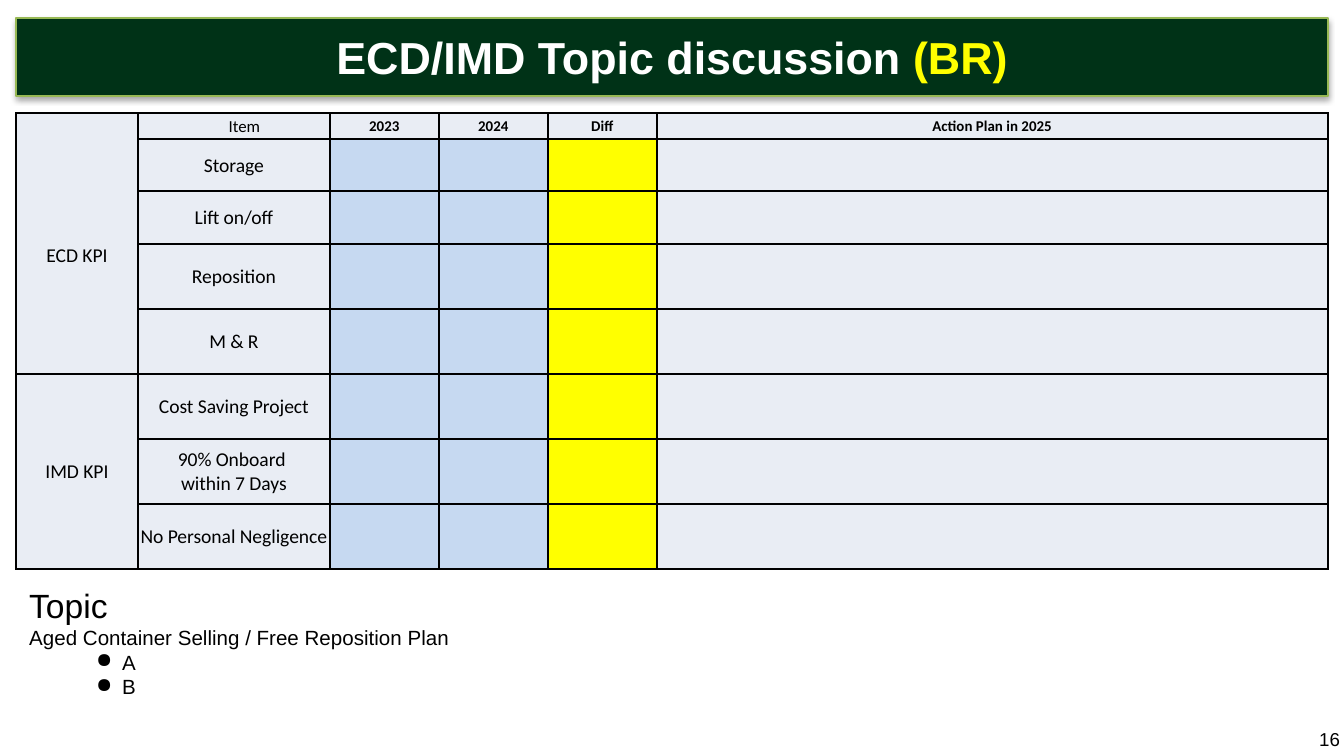
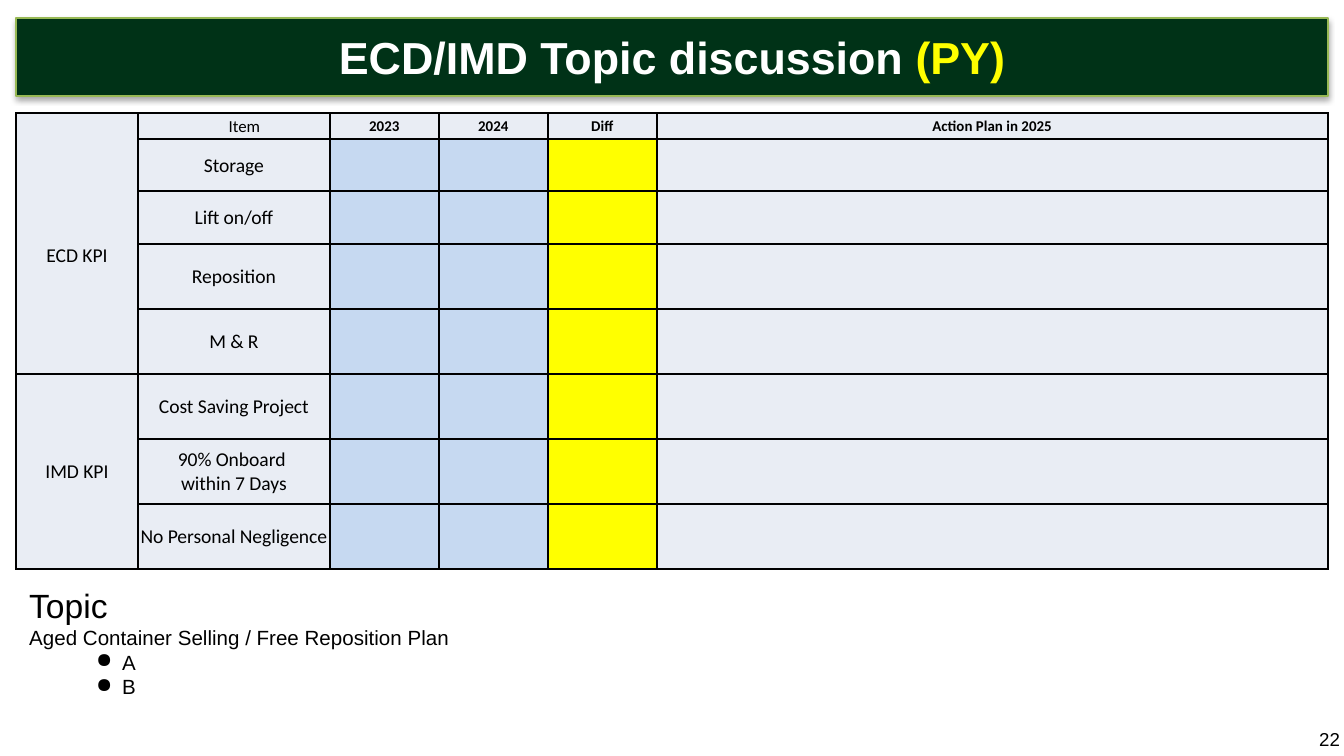
"""Build the ECD/IMD topic discussion slides, one per country."""
from dataclasses import dataclass
from typing import Any

from lxml.etree import SubElement
from pptx import Presentation
from pptx.dml.color import RGBColor as RGB
from pptx.enum.text import MSO_ANCHOR as Anchor, MSO_AUTO_SIZE as AutoSize, PP_ALIGN as Align
from pptx.oxml import parse_xml
from pptx.oxml.ns import nsdecls, qn
from pptx.util import Emu, Pt

COLORS = {
    "band": "003217", "edge": "98B955", "accent": "FFFF00", "white": "FFFFFF",
    "ink": "000000", "cell": "E9EDF4", "year": "C6D9F1",
}
LEFT, WIDTH = 16, 1312
COL_WIDTHS = [122, 192, 109, 109, 109, 671]
COL_FILLS = ["cell", "cell", "year", "year", "accent", "cell"]
HEADINGS = ["2023", "2024", "Diff", "Action Plan in 2025"]
HEADER_HEIGHT = 26


@dataclass(frozen=True)
class Country:
    code: str
    page: int


@dataclass(frozen=True)
class Item:
    name: str
    height: int = 65


@dataclass(frozen=True)
class Group:
    name: str
    first: int
    last: int
    top: int = 1


COUNTRIES = [Country("BR", 16), Country("PY", 22)]
ITEMS = [
    Item("Storage", 52), Item("Lift on/off", 53), Item("Reposition"), Item("M & R"),
    Item("Cost Saving Project"), Item("90% Onboard \nwithin 7 Days"),
    Item("No Personal Negligence"),
]
GROUPS = [Group("ECD KPI", 0, 4, top=25), Group("IMD KPI", 5, 7)]


def px(n: int) -> Emu:
    """Turn pixels into EMU."""
    return Emu(round(n * 914400 / 134.4))


def rgb(name: str) -> RGB:
    """Look up a colour by name."""
    return RGB.from_string(COLORS[name])


def set_font(p: Any, size: float, name: str, color: str = "ink", bold: bool = False) -> None:
    """Format the font of a whole paragraph."""
    f = p.font
    f.size, f.name, f.bold = Pt(size), name, bold
    f.color.rgb = rgb(color)


def add_title(slide: Any, country: Country) -> None:
    """Turn the title placeholder into the shadowed band."""
    sp = slide.shapes.title
    sp.left, sp.top, sp.width, sp.height = px(LEFT), px(18), px(WIDTH), px(78)
    sp.fill.solid()
    sp.fill.fore_color.rgb = rgb("band")
    sp.line.color.rgb = rgb("edge")
    sp.line.width = Pt(0.75)
    sp.shadow.inherit = False
    effects = sp._element.spPr.find(qn("a:effectLst"))
    shadow = SubElement(effects, qn("a:outerShdw"), blurRad=str(Pt(3.1)), dist=str(Pt(1.8)),
                        dir="5400000", rotWithShape="0")
    color = SubElement(shadow, qn("a:srgbClr"), val=COLORS["ink"])
    SubElement(color, qn("a:alpha"), val="35000")

    tf = sp.text_frame
    tf.auto_size, tf.word_wrap = AutoSize.NONE, True
    tf.vertical_anchor = Anchor.MIDDLE
    tf.margin_left = tf.margin_top = tf.margin_right = tf.margin_bottom = 0
    p = tf.paragraphs[0]
    p.alignment = Align.CENTER
    set_font(p, 24, "Arial", "white", bold=True)
    for text, name in (("ECD/IMD Topic discussion ", "white"), (f"({country.code})", "accent")):
        r = p.add_run()
        r.text = text
        r.font.color.rgb = rgb(name)


def style_cell(cell: Any, fill: str) -> None:
    """Give a cell its fill, margins and borders."""
    cell.fill.solid()
    cell.fill.fore_color.rgb = rgb(fill)
    cell.vertical_anchor = Anchor.MIDDLE
    cell.margin_left = cell.margin_right = cell.margin_top = px(1)
    cell.margin_bottom = 0
    tc_pr = cell._tc.get_or_add_tcPr()
    for i, side in enumerate("LRTB"):
        tc_pr.insert(i, parse_xml(
            f'<a:ln{side} {nsdecls("a")} w="{Pt(1)}"><a:solidFill>'
            f'<a:srgbClr val="{COLORS["ink"]}"/></a:solidFill></a:ln{side}>'))


def write_cell(cell: Any, text: str, size: float = 10.5, bold: bool = False) -> None:
    """Write centred text into a cell."""
    cell.text_frame.text = text
    for p in cell.text_frame.paragraphs:
        p.alignment = Align.CENTER
        set_font(p, size, "Calibri", bold=bold)


def add_kpi_table(slide: Any) -> None:
    """Add the table of KPI items and their action plans."""
    heights = [HEADER_HEIGHT] + [item.height for item in ITEMS]
    tbl = slide.shapes.add_table(len(heights), len(COL_WIDTHS), px(LEFT), px(113),
                                 px(WIDTH), px(sum(heights))).table
    tbl.first_row = tbl.horz_banding = False
    for col, width in zip(tbl.columns, COL_WIDTHS):
        col.width = px(width)
    for i, height in enumerate(heights):
        tbl.rows[i].height = px(height)
        for j, fill in enumerate(COL_FILLS):
            style_cell(tbl.cell(i, j), fill if i else "cell")

    write_cell(tbl.cell(0, 1), "Item", 9)
    tbl.cell(0, 1).margin_left = px(22)
    for j, heading in enumerate(HEADINGS, 2):
        write_cell(tbl.cell(0, j), heading, 8, bold=True)
    for i, item in enumerate(ITEMS, 1):
        write_cell(tbl.cell(i, 1), item.name)
    for group in GROUPS:
        cell = tbl.cell(group.first, 0)
        cell.merge(tbl.cell(group.last, 0))
        write_cell(cell, group.name)
        cell.margin_top = px(group.top)


def add_topics(slide: Any) -> None:
    """Add the topic heading with its bullets."""
    tf = slide.shapes.add_textbox(px(LEFT), px(578), px(WIDTH), px(178)).text_frame
    tf.word_wrap, tf.auto_size = True, AutoSize.SHAPE_TO_FIT_TEXT
    tf.text = "Topic\nAged Container Selling / Free Reposition Plan\nA\nB"
    for p in tf.paragraphs:
        set_font(p, 11, "Arial")
    tf.paragraphs[0].font.size = Pt(18)
    for p in tf.paragraphs[2:]:
        p.level = 1
        p_pr = p._p.get_or_add_pPr()
        p_pr.set("marL", str(px(93)))
        p_pr.set("indent", str(px(-26)))
        p_pr.insert(0, parse_xml(f'<a:buChar {nsdecls("a")} char="●"/>'))


def add_page_number(slide: Any, page: int) -> None:
    """Add the page number in the corner."""
    tf = slide.shapes.add_textbox(px(1306), px(724), px(86), px(31)).text_frame
    tf.word_wrap, tf.vertical_anchor = True, Anchor.MIDDLE
    tf.text = str(page)
    set_font(tf.paragraphs[0], 10, "Arial")


def main() -> None:
    """Build and save the presentation."""
    prs = Presentation()
    prs.slide_width, prs.slide_height = px(1344), px(756)
    for country in COUNTRIES:
        slide = prs.slides.add_slide(prs.slide_layouts[5])
        add_title(slide, country)
        add_kpi_table(slide)
        add_topics(slide)
        add_page_number(slide, country.page)
    prs.save("out.pptx")


if __name__ == "__main__":
    main()
